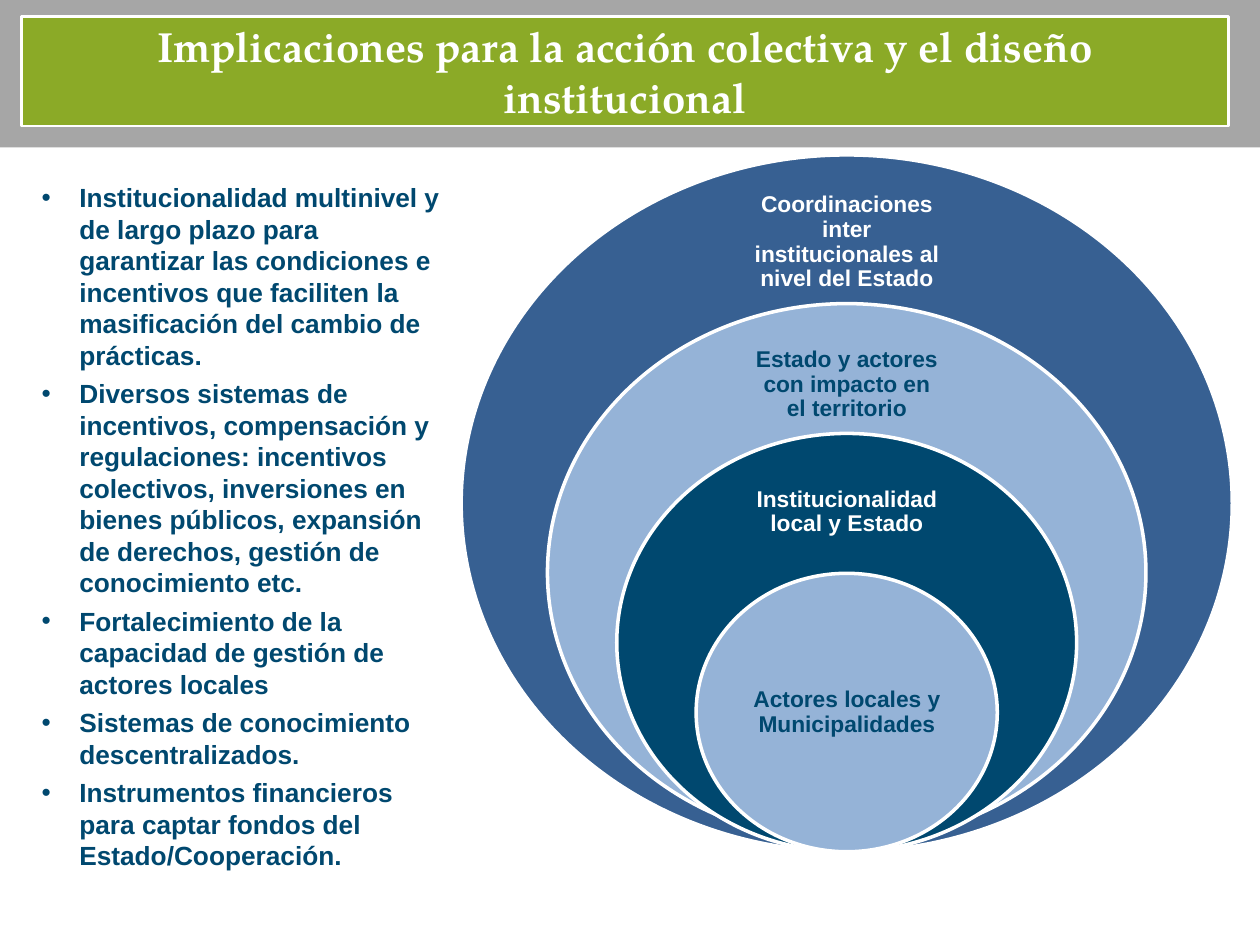
from dataclasses import dataclass

from lxml import etree
from pptx import Presentation
from pptx import util as u
from pptx.dml.color import RGBColor
from pptx.enum import shapes, text
from pptx.oxml.ns import qn


@dataclass(frozen=True)
class Theme:
    """Colours, fonts and type sizes of the slide."""
    white: str = "FFFFFF"
    navy: str = "00486F"
    blue: str = "376092"
    sky: str = "95B3D7"
    gray: str = "A6A6A6"
    green: str = "8BAA27"
    title_font: str = "TeX Gyre Pagella"
    body_font: str = "Arial"
    title_size: int = 24
    body_size: int = 15
    label_size: int = 13


THEME = Theme()
TITLE = "Implicaciones para la acción colectiva y el diseño institucional"
IMPLICATIONS = [
    "Institucionalidad multinivel y de largo plazo para garantizar las condiciones e "
    "incentivos que faciliten la masificación del cambio de prácticas.",
    "Diversos sistemas de incentivos, compensación y regulaciones: incentivos colectivos, "
    "inversiones en bienes públicos, expansión de derechos, gestión de conocimiento etc.",
    "Fortalecimiento de la capacidad de gestión de actores locales",
    "Sistemas de conocimiento descentralizados.",
    "Instrumentos financieros para captar fondos del Estado/Cooperación.",
]
CENTER_X = 6.72
LEVELS = [
    ("Coordinaciones inter institucionales al nivel del Estado",
     THEME.blue, THEME.white, (1.23, 6.12, 5.53), (1.51, 1.71, 0.83)),
    ("Estado y actores con impacto en el territorio",
     THEME.sky, THEME.navy, (2.41, 4.75, 4.27), (2.67, 1.66, 0.77)),
    ("Institucionalidad local y Estado",
     THEME.navy, THEME.white, (3.44, 3.65, 3.32), (3.69, 1.7, 0.75)),
    ("Actores locales y Municipalidades",
     THEME.sky, THEME.navy, (4.55, 2.39, 2.21), (5.1, 1.69, 1.11)),
]


def centered(top, width, height):
    """Return the box in lengths, centred on the axis of the diagram."""
    return [u.Inches(n) for n in (CENTER_X - width / 2, top, width, height)]


def place(shape, left, top, width, height):
    """Move and size a placeholder, in inches."""
    shape.left, shape.top = u.Inches(left), u.Inches(top)
    shape.width, shape.height = u.Inches(width), u.Inches(height)


def paint(shape, fill, line_width=0):
    """Fill a shape and give it a white outline or none."""
    shape.fill.solid()
    shape.fill.fore_color.rgb = RGBColor.from_string(fill)
    if line_width:
        shape.line.color.rgb = RGBColor.from_string(THEME.white)
        shape.line.width = u.Pt(line_width)
    else:
        shape.line.fill.background()


def style(paragraph, font, size, color):
    """Set bold type on the runs of a paragraph."""
    for run in paragraph.runs:
        run.font.name, run.font.size, run.font.bold = font, u.Pt(size), True
        run.font.color.rgb = RGBColor.from_string(color)


def add_band(slide):
    """Put the gray header band behind everything else."""
    band = slide.shapes.add_shape(
        shapes.MSO_SHAPE.RECTANGLE, 0, 0, u.Inches(10), u.Inches(1.17))
    band.shadow.inherit = False
    paint(band, THEME.gray)
    slide.shapes._spTree.insert(2, band._element)


def fill_title(title):
    """Write the title on its green plate."""
    place(title, 0.17, 0.13, 9.58, 0.87)
    paint(title, THEME.green, 1.5)
    frame = title.text_frame
    frame.text = TITLE
    frame.auto_size = text.MSO_AUTO_SIZE.NONE
    frame.vertical_anchor = text.MSO_ANCHOR.MIDDLE
    frame.paragraphs[0].alignment = text.PP_ALIGN.CENTER
    style(frame.paragraphs[0], THEME.title_font, THEME.title_size, THEME.white)


def fill_list(body):
    """Write the bulleted implications."""
    place(body, 0.23, 1.39, 3.43, 5.35)
    frame = body.text_frame
    frame.text = "\n".join(IMPLICATIONS)
    frame.auto_size = text.MSO_AUTO_SIZE.NONE
    for index, paragraph in enumerate(frame.paragraphs):
        properties = paragraph._p.get_or_add_pPr()
        properties.set("marL", str(u.Inches(0.3)))
        properties.set("indent", str(u.Inches(-0.3)))
        etree.SubElement(properties, qn("a:buChar")).set("char", "•")
        paragraph.space_before = u.Pt(4 if index else 0)
        style(paragraph, THEME.body_font, THEME.body_size, THEME.navy)


def add_level(diagram, wording, fill, color, oval_box, label_box):
    """Add one nested oval and its label."""
    oval = diagram.shapes.add_shape(shapes.MSO_SHAPE.OVAL, *centered(*oval_box))
    oval.shadow.inherit = False
    paint(oval, fill, 2)
    frame = diagram.shapes.add_textbox(*centered(*label_box)).text_frame
    frame.text = wording
    frame.word_wrap = True
    frame.vertical_anchor = text.MSO_ANCHOR.MIDDLE
    frame.margin_left = frame.margin_right = u.Inches(0.1)
    frame.margin_top = frame.margin_bottom = u.Inches(0.1)
    label = frame.paragraphs[0]
    label.alignment = text.PP_ALIGN.CENTER
    label.line_spacing = 0.9
    style(label, THEME.body_font, THEME.label_size, color)


def main():
    """Build the slide and save it."""
    deck = Presentation()
    deck.slide_width, deck.slide_height = u.Inches(10), u.Inches(7.5)
    slide = deck.slides.add_slide(deck.slide_layouts[1])
    add_band(slide)
    fill_title(slide.shapes.title)
    fill_list(slide.placeholders[1])
    diagram = slide.shapes.add_group_shape()
    for level in LEVELS:
        add_level(diagram, *level)
    deck.save("out.pptx")


if __name__ == "__main__":
    main()
